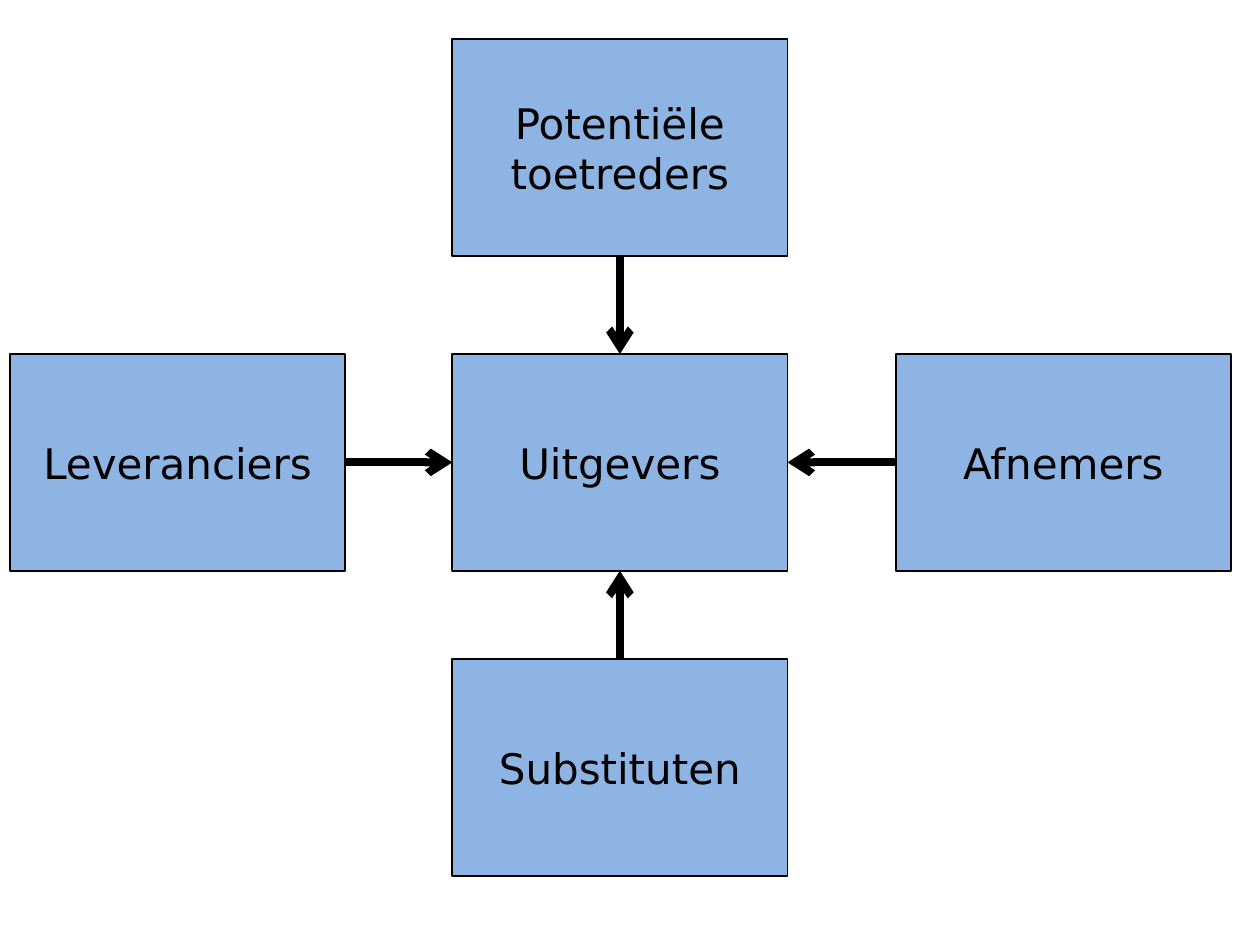
from dataclasses import dataclass

from lxml.etree import SubElement
from pptx import Presentation
from pptx.dml.color import RGBColor
from pptx.enum.shapes import MSO_CONNECTOR, MSO_SHAPE
from pptx.enum.text import MSO_ANCHOR, PP_ALIGN
from pptx.oxml.ns import qn
from pptx.util import Inches, Pt

TOP, LEFT, BOTTOM, RIGHT = range(4)


@dataclass(frozen=True)
class Theme:
    font: str = "DejaVu Sans"
    text_size: float = 24
    box_fill: RGBColor = RGBColor(0x8E, 0xB4, 0xE3)
    ink: RGBColor = RGBColor(0, 0, 0)
    outline_width: float = 1
    arrow_width: float = 4.5


class DiagramBuilder:
    def __init__(self, slide, theme):
        self.slide = slide
        self.theme = theme

    def box(self, text, left, top, width=2.66, height=1.72):
        shape = self.slide.shapes.add_shape(
            MSO_SHAPE.RECTANGLE, Inches(left), Inches(top), Inches(width), Inches(height)
        )
        shape.shadow.inherit = False
        shape.fill.solid()
        shape.fill.fore_color.rgb = self.theme.box_fill
        shape.line.color.rgb = self.theme.ink
        shape.line.width = Pt(self.theme.outline_width)
        frame = shape.text_frame
        frame.word_wrap = True
        frame.vertical_anchor = MSO_ANCHOR.MIDDLE
        paragraph = frame.paragraphs[0]
        paragraph.text = text
        paragraph.alignment = PP_ALIGN.CENTER
        paragraph.font.name = self.theme.font
        paragraph.font.size = Pt(self.theme.text_size)
        paragraph.font.color.rgb = self.theme.ink
        return shape

    def arrow(self, source, source_side, target, target_side):
        """Join two boxes at the middles of the given sides, pointing at target."""
        connector = self.slide.shapes.add_connector(MSO_CONNECTOR.STRAIGHT, 0, 0, 0, 0)
        connector.begin_connect(source, source_side)
        connector.end_connect(target, target_side)
        connector.line.color.rgb = self.theme.ink
        connector.line.width = Pt(self.theme.arrow_width)
        SubElement(connector.line._get_or_add_ln(), qn("a:tailEnd"), type="arrow")
        SubElement(connector._element.spPr, qn("a:effectLst"))


def main():
    presentation = Presentation()
    presentation.slide_width = Inches(10)
    presentation.slide_height = Inches(7.5)
    slide = presentation.slides.add_slide(presentation.slide_layouts[6])
    builder = DiagramBuilder(slide, Theme())

    center_left, middle_top = 3.59, 2.81
    publishers = builder.box("Uitgevers", center_left, middle_top)
    # Each force: text, left, top, its own side, the side of the centre it meets
    forces = [
        ("Potentiële toetreders", center_left, 0.31, BOTTOM, TOP),
        ("Afnemers", 7.11, middle_top, LEFT, RIGHT),
        ("Substituten", center_left, 5.23, TOP, BOTTOM),
        ("Leveranciers", 0.08, middle_top, RIGHT, LEFT),
    ]
    for text, left, top, own_side, center_side in forces:
        force = builder.box(text, left, top)
        builder.arrow(force, own_side, publishers, center_side)

    presentation.save("out.pptx")


if __name__ == "__main__":
    main()
